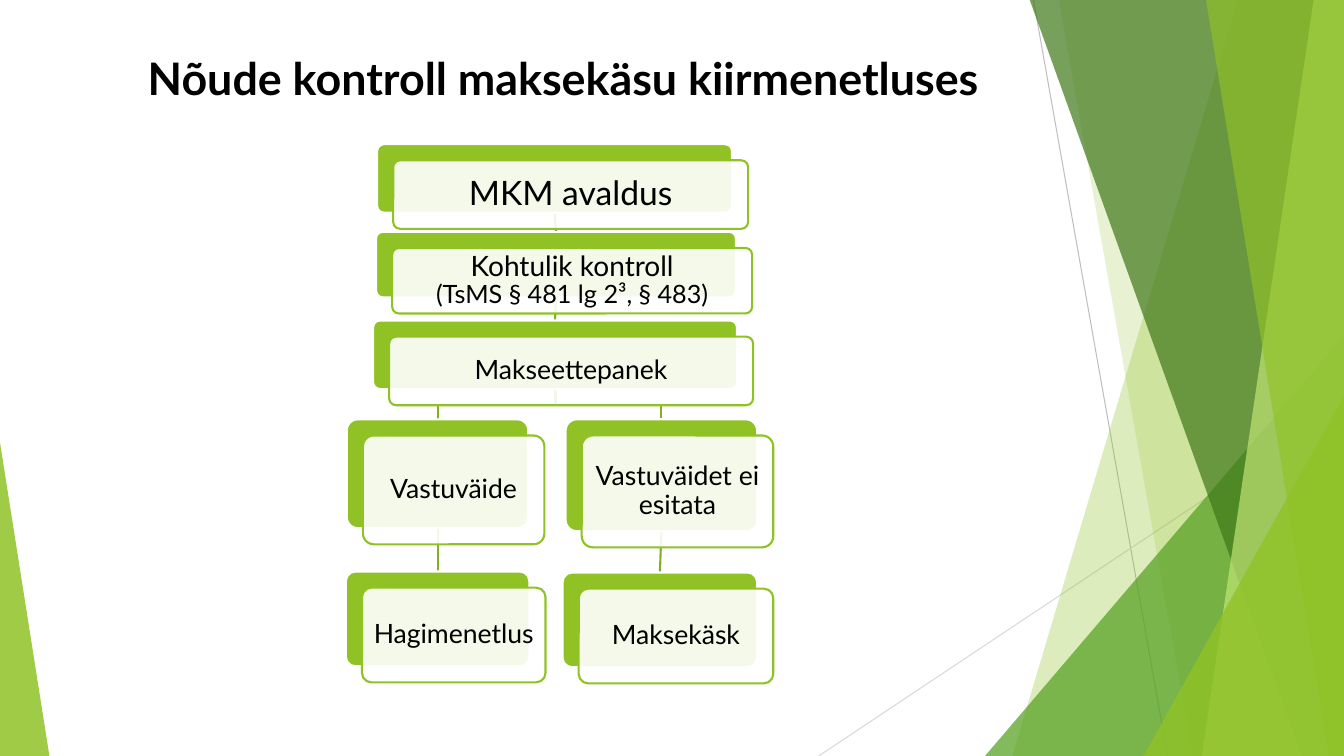
from dataclasses import dataclass

import pptx
import pptx.dml.color
import pptx.dml.fill
import pptx.enum.shapes
import pptx.enum.text
import pptx.oxml
import pptx.oxml.ns
import pptx.shapes.autoshape
import pptx.shapes.connector
import pptx.slide
import pptx.text.text
import pptx.util

PX = 9144  # EMU per px, 100 px to the inch
SLIDE_W, SLIDE_H = 1333, 750
FONT = "Lato"
BLACK, WHITE, GREEN = "000000", "FFFFFF", "90C226"
LINK, FIRST_LINK = "83B022", "739B1E"
CARD_SHIFT = 16
CORNER = 0.1
MSO_SHAPE = pptx.enum.shapes.MSO_SHAPE
PP_ALIGN = pptx.enum.text.PP_ALIGN
MSO_ANCHOR = pptx.enum.text.MSO_ANCHOR


@dataclass
class Shard:
    """Facet that reaches the right edge over the full slide height."""
    top_x: int
    bottom_x: int
    color: str
    opacity: int


@dataclass
class Wedge:
    """Triangle on the bottom edge; apex is 0 (left) or 1 (right)."""
    left: int
    top: int
    width: int
    apex: int
    color: str
    opacity: int


@dataclass
class Step:
    left: int
    top: int
    width: int
    height: int
    lines: tuple[tuple[str, int], ...]


@dataclass
class Link:
    source: str
    target: str
    color: str = LINK


GUIDES = [((1025, 0), (1158, 750), "BFBFBF"), ((1333, 403), (812, 750), "D9D9D9")]

FACETS = [
    Shard(1228, 1004, GREEN, 30),
    Shard(1050, 1183, GREEN, 20),
    Wedge(977, 333, 356, 1, "54A021", 72),
    Shard(1021, 1291, "3F7819", 70),
    Shard(1303, 1192, "C0E474", 70),
    Shard(1196, 1318, GREEN, 65),
    Wedge(1134, 393, 199, 1, GREEN, 80),
    Wedge(0, 439, 49, 0, GREEN, 85),
]

STEPS = {
    "application": Step(374, 143, 352, 68, (("MKM avaldus", 24),)),
    "review": Step(373, 230, 357, 65, (("Kohtulik kontroll", 20),
                                       ("(TsMS § 481 lg 2³, § 483)", 18))),
    "proposal": Step(370, 318, 361, 68, (("Makseettepanek", 19),)),
    "objection": Step(344, 416, 180, 108, (("Vastuväide", 19),)),
    "action": Step(343, 567, 182, 94, (("Hagimenetlus", 19),)),
    "no_objection": Step(561, 416, 190, 111, (("Vastuväidet ei esitata", 19),)),
    "order": Step(558, 568, 193, 94, (("Maksekäsk", 19),)),
}

LINKS = [
    Link("no_objection", "order"),
    Link("objection", "action"),
    Link("review", "proposal"),
    Link("application", "review", FIRST_LINK),
]
BRANCH_X = (656, 434)
BRANCH_START, BRANCH_TURN, BRANCH_END = (551, 386), 402, 416


def paint(fill: pptx.dml.fill.FillFormat, color: str) -> None:
    fill.solid()
    fill.fore_color.rgb = pptx.dml.color.RGBColor.from_string(color)


def style(shape: pptx.shapes.autoshape.Shape, color: str, opacity: int = 100,
          outline: str | None = None) -> None:
    shape.shadow.inherit = False
    paint(shape.fill, color)
    if opacity < 100:
        solid = shape.element.spPr.find(pptx.oxml.ns.qn("a:solidFill"))
        solid[0].append(pptx.oxml.parse_xml(
            f'<a:alpha {pptx.oxml.ns.nsdecls("a")} val="{opacity * 1000}"/>'))
    if outline:
        paint(shape.line.fill, outline)
        shape.line.width = pptx.util.Pt(1.5)
    else:
        shape.line.fill.background()


def add_preset(slide: pptx.slide.Slide, kind: MSO_SHAPE, left: int, top: int,
               width: int, height: int, adjustment: float) -> pptx.shapes.autoshape.Shape:
    shape = slide.shapes.add_shape(kind, left * PX, top * PX, width * PX, height * PX)
    shape.adjustments[0] = adjustment
    return shape


def add_line(slide: pptx.slide.Slide, start: tuple[int, int], end: tuple[int, int],
             color: str, points: float) -> pptx.shapes.connector.Connector:
    line = slide.shapes.add_connector(
        pptx.enum.shapes.MSO_CONNECTOR.STRAIGHT, *(value * PX for value in start + end))
    paint(line.line.fill, color)
    line.line.width = pptx.util.Pt(points)
    line.element.spPr.append(pptx.oxml.parse_xml(
        f'<a:effectLst {pptx.oxml.ns.nsdecls("a")}/>'))
    return line


def add_facet(slide: pptx.slide.Slide, facet: Shard | Wedge) -> None:
    if isinstance(facet, Wedge):
        shape = add_preset(slide, MSO_SHAPE.ISOSCELES_TRIANGLE, facet.left, facet.top,
                           facet.width, SLIDE_H - facet.top, facet.apex)
    else:
        outline = slide.shapes.build_freeform(facet.top_x, -1, scale=PX)
        outline.add_line_segments(
            [(SLIDE_W, -1), (SLIDE_W, SLIDE_H), (facet.bottom_x, SLIDE_H)], close=True)
        shape = outline.convert_to_shape()
    style(shape, facet.color, facet.opacity)


def add_branch(slide: pptx.slide.Slide, end_x: int) -> None:
    path = slide.shapes.build_freeform(*BRANCH_START, scale=PX)
    path.add_line_segments([(BRANCH_START[0], BRANCH_TURN), (end_x, BRANCH_TURN),
                            (end_x, BRANCH_END)], close=False)
    branch = path.convert_to_shape()
    style(branch, WHITE, outline=LINK)
    branch.fill.background()


def add_run(paragraph: pptx.text.text._Paragraph, text: str, size: int,
            bold: bool = False) -> None:
    run = paragraph.add_run()
    run.text = text
    run.font.name = FONT
    run.font.size = pptx.util.Pt(size)
    run.font.bold = bold
    paint(run.font.fill, BLACK)


def add_step(slide: pptx.slide.Slide, step: Step) -> pptx.shapes.autoshape.Shape:
    """Draw the green back plate and the text card; return the plate."""
    plate = add_preset(slide, MSO_SHAPE.ROUNDED_RECTANGLE, step.left, step.top,
                       step.width, step.height, CORNER)
    style(plate, GREEN, outline=WHITE)
    card = add_preset(slide, MSO_SHAPE.ROUNDED_RECTANGLE, step.left + CARD_SHIFT,
                      step.top + CARD_SHIFT, step.width, step.height, CORNER)
    style(card, WHITE, 90, GREEN)
    frame = card.text_frame
    frame.word_wrap = True
    frame.vertical_anchor = MSO_ANCHOR.MIDDLE
    frame.margin_left = frame.margin_right = 8 * PX
    frame.margin_top = frame.margin_bottom = 8 * PX
    for index, (text, size) in enumerate(step.lines):
        paragraph = frame.add_paragraph() if index else frame.paragraphs[0]
        paragraph.alignment = PP_ALIGN.CENTER
        paragraph.line_spacing = 0.9
        add_run(paragraph, text, size)
    return plate


def add_title(slide: pptx.slide.Slide) -> None:
    title = slide.shapes.title
    title.left, title.top, title.width, title.height = (
        value * PX for value in (105, 45, 908, 64))
    frame = title.text_frame
    frame.word_wrap = True
    frame.auto_size = pptx.enum.text.MSO_AUTO_SIZE.SHAPE_TO_FIT_TEXT
    frame.vertical_anchor = MSO_ANCHOR.TOP
    frame.paragraphs[0].alignment = PP_ALIGN.CENTER
    add_run(frame.paragraphs[0], "Nõude kontroll maksekäsu kiirmenetluses", 32, bold=True)


def main() -> None:
    deck = pptx.Presentation()
    deck.slide_width, deck.slide_height = SLIDE_W * PX, SLIDE_H * PX
    slide = deck.slides.add_slide(deck.slide_layouts[5])
    add_title(slide)

    # Background facets
    for start, end, color in GUIDES:
        add_line(slide, start, end, color, 0.75)
    for facet in FACETS:
        add_facet(slide, facet)

    # Flow: lines lie behind the steps and are joined once these exist
    joints = [(link, add_line(slide, (0, 0), (0, 0), link.color, 1.5)) for link in LINKS]
    for end_x in BRANCH_X:
        add_branch(slide, end_x)
    plates = {key: add_step(slide, step) for key, step in STEPS.items()}
    for link, line in joints:
        line.begin_connect(plates[link.source], 2)
        line.end_connect(plates[link.target], 0)

    deck.save("out.pptx")


if __name__ == "__main__":
    main()
